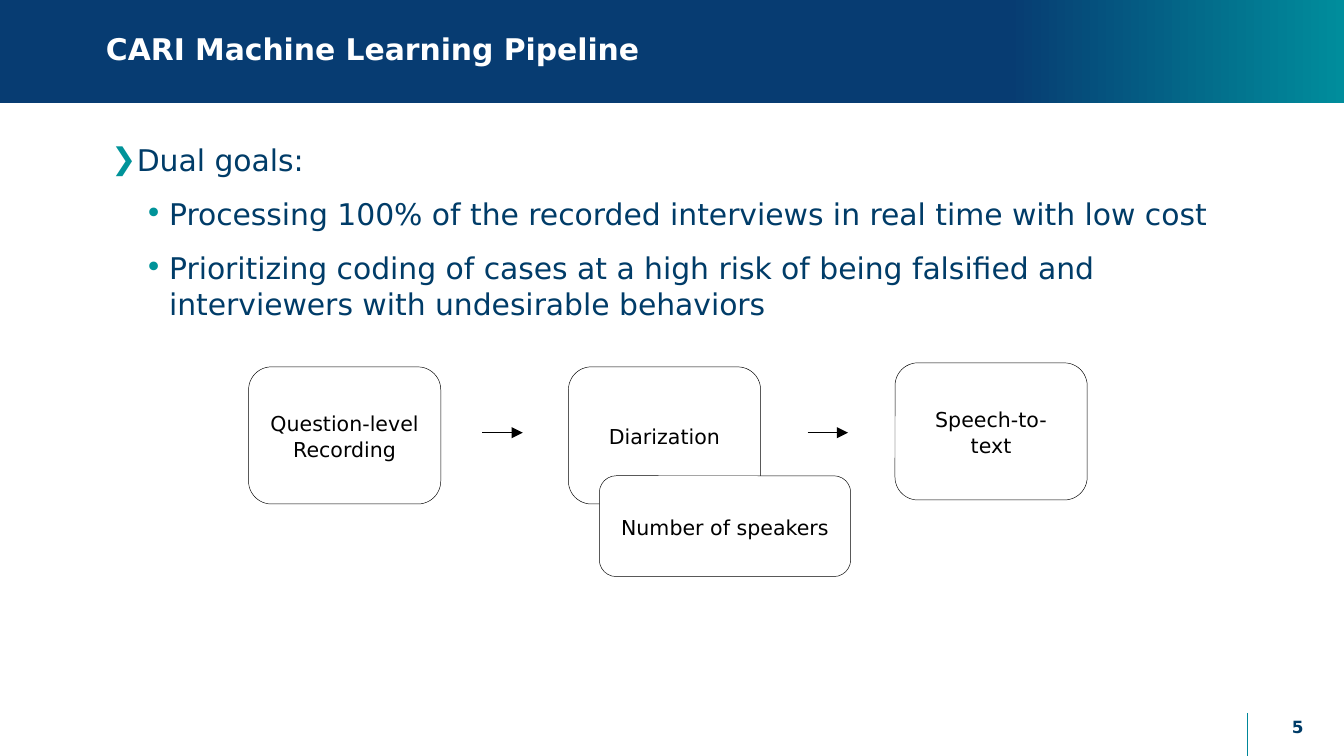
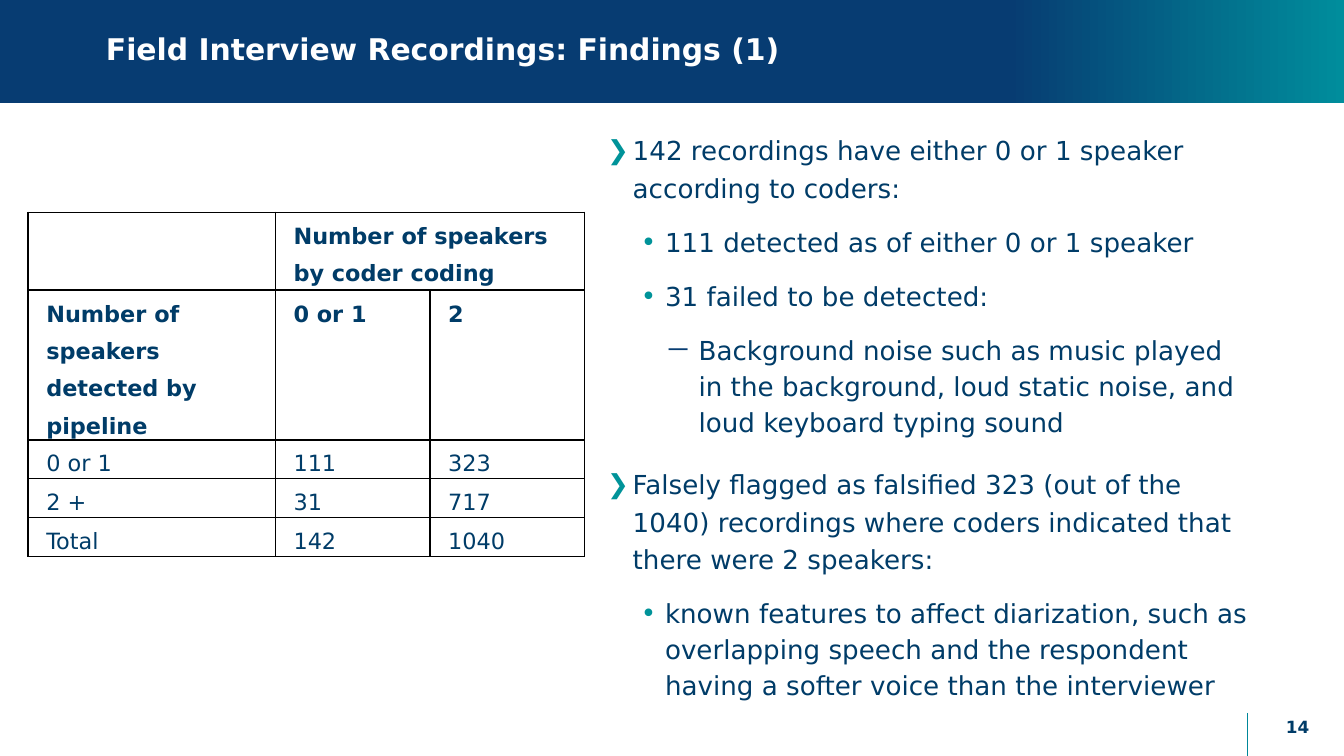
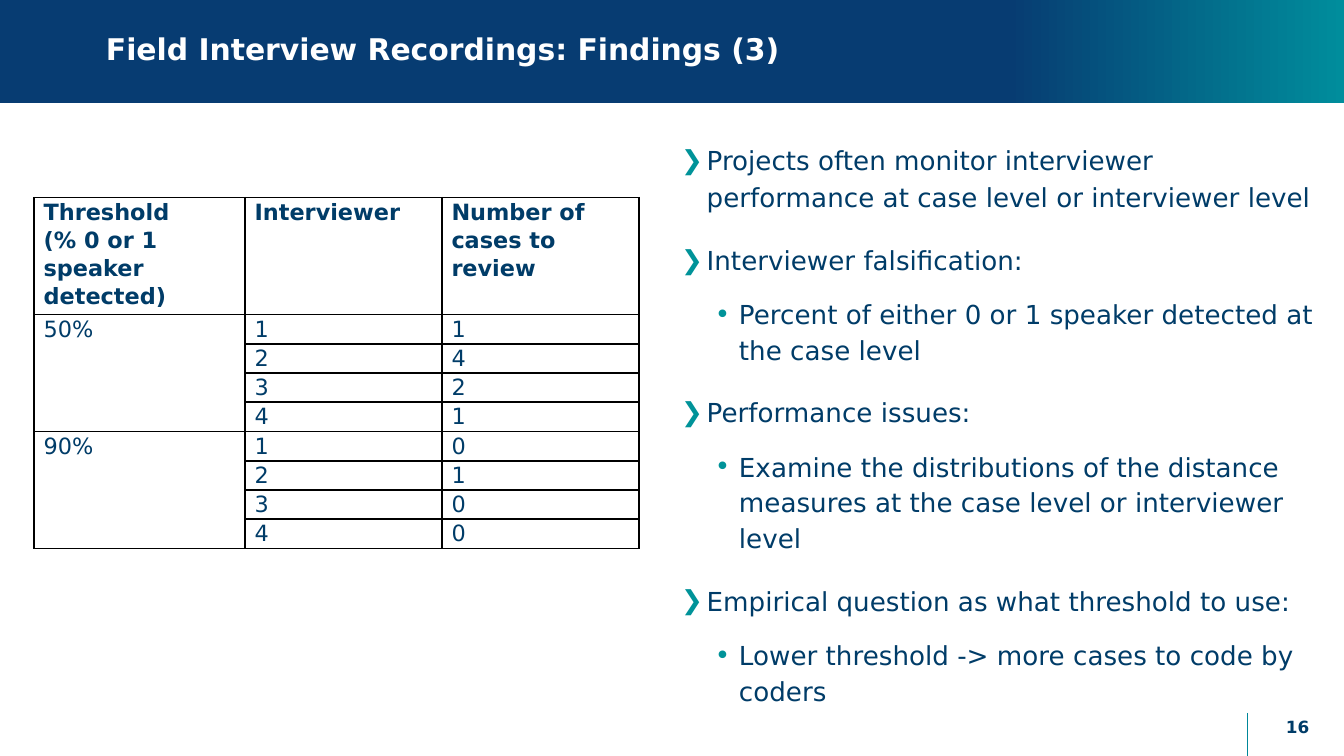
from pptx import Presentation, util as u
from pptx.dml.color import RGBColor
from pptx.enum import shapes, text
from pptx.oxml import parse_xml
from pptx.oxml.ns import nsdecls, qn
from lxml import etree

COLS, ROWS = 100, 56.25
UNIT = u.Inches(0.1)

NAVY = RGBColor(0x07, 0x3C, 0x72)
INK = RGBColor(0x00, 0x3C, 0x68)
TEAL = RGBColor(0x00, 0x8D, 0x9C)
RULE = RGBColor(0x00, 0x87, 0x99)
MARK = RGBColor(0x00, 0x93, 0x99)
WHITE = RGBColor(0xFF, 0xFF, 0xFF)
BLACK = RGBColor(0x00, 0x00, 0x00)
FONT = "DejaVu Sans"

BAND = (0, 0, COLS, 7.7)
TITLE = (6.9, 0, 81.5, 7.6)
NUMBER = (93.1, 52.55, 6.9, 3)
# level: (bullet, colour, left margin, hanging indent, line pitch, space before)
LEVELS = [
    ("❯", MARK, 2.6, -1.9, 20, 7.5),
    ("•", MARK, 5, -1.8, 19.2, 3.8),
    ("－", NAVY, 7.5, -2.5, 19.2, 3.8),
]


def grid(*lengths):
    """Turn grid units into slide lengths."""
    return [u.Emu(round(n * UNIT)) for n in lengths]


def add_run(p, words, size, color, bold=False):
    """Add one styled run to a paragraph."""
    r = p.add_run()
    r.text = words
    r.font.name, r.font.size, r.font.bold = FONT, u.Pt(size), bold
    r.font.color.rgb = color


def add_text(s, box, anchor=text.MSO_ANCHOR.TOP):
    """Add a wrapping text box and return its frame."""
    tf = s.shapes.add_textbox(*grid(*box)).text_frame
    tf.word_wrap, tf.vertical_anchor = True, anchor
    return tf


def add_line(holder, start, end, color, width, arrow=False):
    """Add a straight line, with an arrowhead if asked."""
    ln = holder.shapes.add_connector(shapes.MSO_CONNECTOR.STRAIGHT, *grid(*start, *end))
    ln.line.color.rgb, ln.line.width = color, u.Pt(width)
    if arrow:
        etree.SubElement(ln.line._get_or_add_ln(), qn("a:tailEnd"), type="triangle")
    etree.SubElement(ln._element.spPr, qn("a:effectLst"))


def add_frame(prs, title, number):
    """Add a slide with its title band, footer rule and page number."""
    s = prs.slides.add_slide(prs.slide_layouts[6])
    band = s.shapes.add_shape(shapes.MSO_SHAPE.RECTANGLE, *grid(*BAND))
    band.shadow.inherit = False
    band.line.fill.background()
    band.fill.gradient()
    band.fill.gradient_angle = 0
    for stop, place, color in zip(band.fill.gradient_stops, (0.75, 1), (NAVY, TEAL)):
        stop.position, stop.color.rgb = place, color
    add_line(s, (92.8, 53.05), (92.8, ROWS), RULE, 0.75)
    p = add_text(s, TITLE, text.MSO_ANCHOR.MIDDLE).paragraphs[0]
    p.line_spacing = 0.9
    add_run(p, title, 16, WHITE, True)
    p = add_text(s, NUMBER, text.MSO_ANCHOR.MIDDLE).paragraphs[0]
    p.alignment = text.PP_ALIGN.CENTER
    add_run(p, str(number), 9, INK, True)
    return s


def add_bullets(s, box, size, items):
    """Fill a box with (level, words) bullet items."""
    tf = add_text(s, box)
    for i, (level, words) in enumerate(items):
        p = tf.add_paragraph() if i else tf.paragraphs[0]
        mark, color, left, hang, pitch, before = LEVELS[level]
        pPr = p._p.get_or_add_pPr()
        margin, indent = grid(left, hang)
        pPr.set("marL", str(margin))
        pPr.set("indent", str(indent))
        clr = etree.SubElement(pPr, qn("a:buClr"))
        etree.SubElement(clr, qn("a:srgbClr"), val=str(color))
        etree.SubElement(pPr, qn("a:buFont"), typeface=FONT)
        etree.SubElement(pPr, qn("a:buChar"), char=mark)
        p.level = level
        p.line_spacing, p.space_after = u.Pt(pitch), u.Pt(6)
        if i:
            p.space_before = u.Pt(before)
        add_run(p, words, size, INK)


def add_flow(s, box):
    """Draw the processing steps and their arrows inside a box."""
    x, y = box[:2]
    group = s.shapes.add_group_shape()
    step = (14.3, 10.2)
    nodes = [
        ("Question-level Recording", 0, 0.3, *step),
        ("Diarization", 23.8, 0.3, *step),
        ("Speech-to-text", 48.1, 0, *step),
        ("Number of speakers", 26.1, 8.4, 18.7, 7.5),
    ]
    for left in (17.4, 41.6):
        add_line(group, (x + left, y + 5.2), (x + left + 3, y + 5.2), BLACK, 0.5, True)
    for words, left, top, width, height in nodes:
        sp = group.shapes.add_shape(shapes.MSO_SHAPE.ROUNDED_RECTANGLE,
                                    *grid(x + left, y + top, width, height))
        sp.shadow.inherit = False
        sp.fill.solid()
        sp.fill.fore_color.rgb = WHITE
        sp.line.color.rgb, sp.line.width = BLACK, u.Pt(0.25)
        tf = sp.text_frame
        tf.word_wrap, tf.vertical_anchor = True, text.MSO_ANCHOR.MIDDLE
        p = tf.paragraphs[0]
        p.alignment, p.line_spacing = text.PP_ALIGN.CENTER, 1.07
        add_run(p, words, 11, BLACK)


def style_cell(cell):
    """Give a cell its insets, clear fill and black borders."""
    cell.margin_left = cell.margin_right = u.Inches(0.07)
    cell.margin_top = cell.margin_bottom = 0
    tcPr = cell._tc.get_or_add_tcPr()
    for side in ("lnL", "lnR", "lnT", "lnB"):
        tcPr.append(parse_xml(
            f'<a:{side} {nsdecls("a")} w="12700"><a:solidFill>'
            f'<a:srgbClr val="{BLACK}"/></a:solidFill></a:{side}>'))
    cell.fill.background()


def add_grid_table(s, box, first_col, heights, rows, heads, merges, spacing, indent=0):
    """Draw a ruled table whose later columns share the width evenly."""
    count = len(rows[0])
    tb = s.shapes.add_table(len(rows), count, *grid(*box)).table
    tb.first_row = tb.horz_banding = False
    rest = (box[2] - first_col) / (count - 1)
    for col, width in zip(tb.columns, grid(first_col, *[rest] * (count - 1))):
        col.width = width
    for row, height in zip(tb.rows, grid(*heights)):
        row.height = height
    for i, row in enumerate(rows):
        for j, words in enumerate(row):
            cell = tb.cell(i, j)
            style_cell(cell)
            for k, line in enumerate(words.split("\n") if words else []):
                tf = cell.text_frame
                p = tf.add_paragraph() if k else tf.paragraphs[0]
                p._p.get_or_add_pPr().set("marL", str(grid(indent)[0]))
                p.line_spacing = spacing
                add_run(p, line, 12, INK, i < heads)
    for start, end in merges:
        tb.cell(*start).merge(tb.cell(*end))


def pipeline_slide(prs):
    """Build the slide on the pipeline's goals and steps."""
    s = add_frame(prs, "CARI Machine Learning Pipeline", 5)
    add_bullets(s, (6.6, 9.9, 86.2, 5.9), 16, [
        (0, "Dual goals:"),
        (1, "Processing 100% of the recorded interviews in real time with low cost"),
        (1, "Prioritizing coding of cases at a high risk of being falsified and "
            "interviewers with undesirable behaviors"),
    ])
    add_flow(s, (18.5, 27, 62.4, 15.9))


def detection_slide(prs):
    """Build the slide comparing detected and coded speakers."""
    s = add_frame(prs, "Field Interview Recordings: Findings (1)", 14)
    add_bullets(s, (43.5, 9.1, 50.6, 32.4), 14, [
        (0, "142 recordings have either 0 or 1 speaker according to coders:"),
        (1, "111 detected as of either 0 or 1 speaker"),
        (1, "31 failed to be detected:"),
        (2, "Background noise such as music played in the background, "
            "loud static noise, and loud keyboard typing sound"),
        (0, "Falsely flagged as falsified 323 (out of the 1040) recordings "
            "where coders indicated that there were 2 speakers:"),
        (1, "known features to affect diarization, such as overlapping speech "
            "and the respondent having a softer voice than the interviewer"),
    ])
    rows = [
        ("", "Number of speakers by coder coding", ""),
        ("Number of speakers detected by pipeline", "0 or 1", "2"),
        ("0 or 1", "111", "323"),
        ("2 +", "31", "717"),
        ("Total", "142", "1040"),
    ]
    add_grid_table(s, (2.1, 15.8, 41.4, 25.3), 18.4, [5.8, 8.4] + [2.9] * 3, rows, 2,
                   [((0, 1), (0, 2))], u.Pt(20), 0.65)


def threshold_slide(prs):
    """Build the slide on review thresholds by interviewer."""
    s = add_frame(prs, "Field Interview Recordings: Findings (3)", 16)
    add_bullets(s, (49, 9.8, 49.8, 39.1), 14, [
        (0, "Projects often monitor interviewer performance at case level or interviewer level"),
        (0, "Interviewer falsification:"),
        (1, "Percent of either 0 or 1 speaker detected at the case level"),
        (0, "Performance issues:"),
        (1, "Examine the distributions of the distance measures at the case level "
            "or interviewer level"),
        (0, "Empirical question as what threshold to use:"),
        (1, "Lower threshold -> more cases to code by coders"),
    ])
    rows = [("Threshold\n(% 0 or 1 speaker detected)", "Interviewer",
             "Number of cases to review")]
    for threshold, cases in (("50%", "1421"), ("90%", "0100")):
        for i, case in enumerate(cases):
            rows.append(("" if i else threshold, str(i + 1), case))
    add_grid_table(s, (2.55, 14.7, 45, 26.2), 15.7, [8.7] + [2.18] * 8, rows, 1,
                   [((1, 0), (4, 0)), ((5, 0), (8, 0))], 1.07)


def main():
    """Build the deck and save it."""
    prs = Presentation()
    prs.slide_width, prs.slide_height = grid(COLS, ROWS)
    pipeline_slide(prs)
    detection_slide(prs)
    threshold_slide(prs)
    prs.save("out.pptx")


if __name__ == "__main__":
    main()
